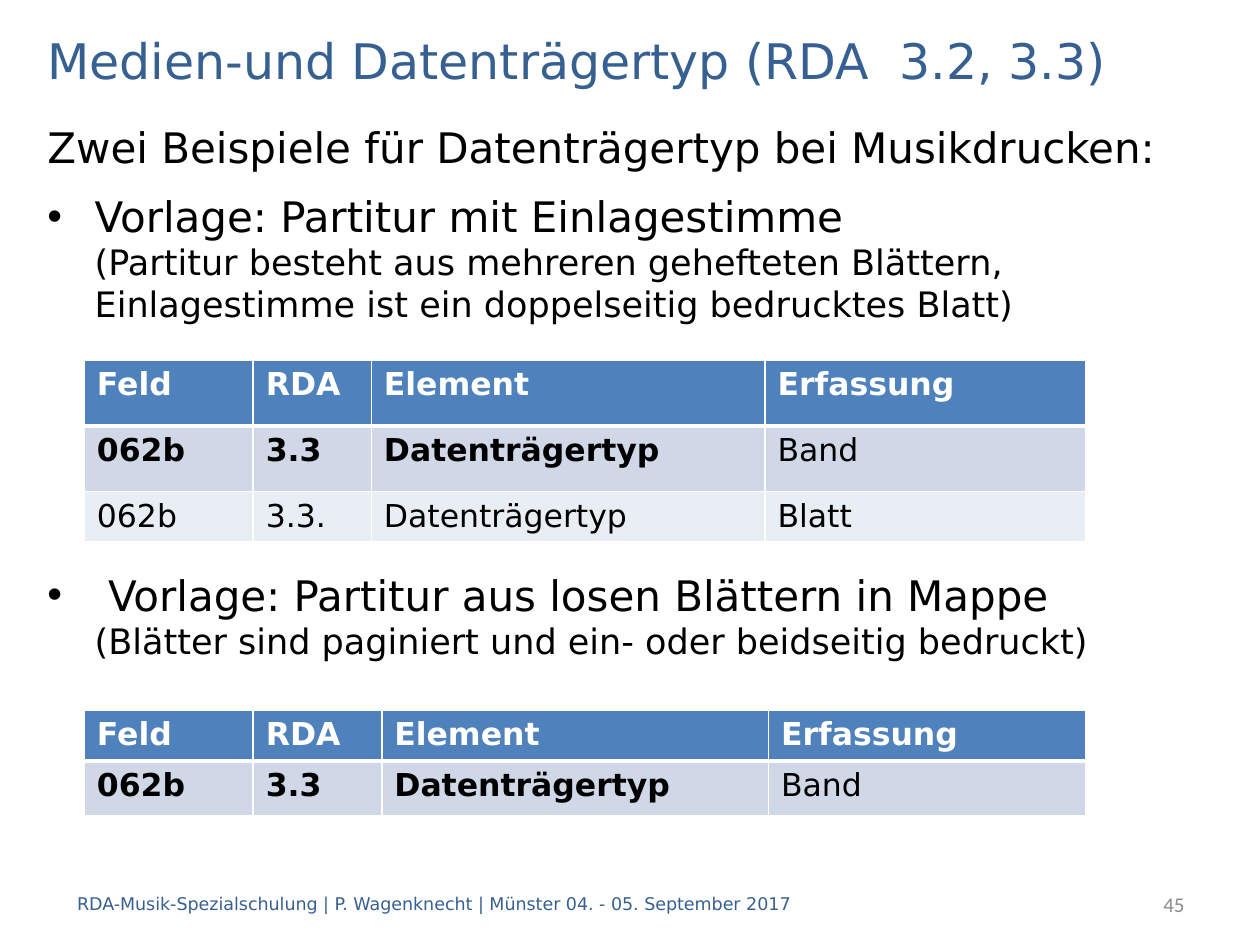
from lxml.etree import SubElement
from pptx import Presentation
from pptx.dml.color import RGBColor
from pptx.enum.text import MSO_ANCHOR as ANCHOR, PP_ALIGN as ALIGN
from pptx.oxml.ns import qn
from pptx.util import Pt

SANS = "DejaVu Sans"
rgb = RGBColor.from_string


def style(p, size, color, name=SANS, bold=False):
    for r in p.runs:
        r.font.size = Pt(size)
        r.font.name = name
        r.font.bold = bold
        r.font.color.rgb = rgb(color)


def add_border(cell, side, width):
    """Draw a white line on one side (L, R, T or B) of a cell."""
    ln = SubElement(cell._tc.get_or_add_tcPr(), qn(f"a:ln{side}"), w=str(Pt(width)))
    SubElement(SubElement(ln, qn("a:solidFill")), qn("a:srgbClr"), val="FFFFFF")


prs = Presentation()
prs.slide_width, prs.slide_height = Pt(720), Pt(540)
s = prs.slides.add_slide(prs.slide_layouts[5])

# Title
title = s.shapes.title
title.left, title.top, title.width, title.height = Pt(20), Pt(14.5), Pt(680), Pt(40)
tf = title.text_frame
tf.text = "Medien-und Datenträgertyp (RDA  3.2, 3.3)"
tf.vertical_anchor = ANCHOR.MIDDLE
tf.paragraphs[0].alignment = ALIGN.LEFT
style(tf.paragraphs[0], 28, "376092")

# Body: an introduction and two bullets, with room for the first table between them
tf = s.shapes.add_textbox(Pt(20), Pt(66), Pt(680), Pt(430)).text_frame
tf.word_wrap = True
p = tf.paragraphs[0]
p.text = "Zwei Beispiele für Datenträgertyp bei Musikdrucken:"
p.space_after = Pt(6)
style(p, 24, "000000")

bullets = [
    (4.5, "Vorlage: Partitur mit Einlagestimme",
     "(Partitur besteht aus mehreren gehefteten Blättern, "
     "Einlagestimme ist ein doppelseitig bedrucktes Blatt)"),
    (139.5, " Vorlage: Partitur aus losen Blättern in Mappe",
     "(Blätter sind paginiert und ein- oder beidseitig bedruckt)"),
]
for gap, heading, detail in bullets:
    p = tf.add_paragraph()
    p.text = f"{heading}\v{detail}"
    p.space_before = Pt(gap)
    style(p, 24, "000000")
    p.runs[1].font.size = Pt(20)
    pPr = p._p.get_or_add_pPr()
    pPr.set("marL", str(Pt(27)))
    pPr.set("indent", str(Pt(-27)))
    SubElement(pPr, qn("a:buFont"), typeface="Arial")
    SubElement(pPr, qn("a:buChar"), char="•")

# Tables: top, column widths, row heights, rows
header = ["Feld", "RDA", "Element", "Erfassung"]
volume = ["062b", "3.3", "Datenträgertyp", "Band"]
sheet = ["062b", "3.3.", "Datenträgertyp", "Blatt"]
row_fills = ["4F81BD", "D0D8E8", "E9EDF4"]
tables = [
    (206, [96.5, 67.5, 225, 183.5], [37.5, 37.5, 28], [header, volume, sheet]),
    (406, [96.5, 73.5, 221, 181.5], [28, 31.5], [header, volume]),
]
for top, widths, heights, rows in tables:
    table = s.shapes.add_table(len(rows), len(header), Pt(48.2), Pt(top),
                               Pt(sum(widths)), Pt(sum(heights))).table
    for column, width in zip(table.columns, widths):
        column.width = Pt(width)
    for i, (height, texts) in enumerate(zip(heights, rows)):
        table.rows[i].height = Pt(height)
        for j, text in enumerate(texts):
            cell = table.cell(i, j)
            cell.text = text
            bold = i == 0 or (i == 1 and j < 3)
            style(cell.text_frame.paragraphs[0], 18,
                  "FFFFFF" if i == 0 else "000000", bold=bold)
            for side in "LRTB":
                header_edge = (i, side) in [(0, "B"), (1, "T")]
                add_border(cell, side, 3 if header_edge else 1)
            cell.fill.solid()
            cell.fill.fore_color.rgb = rgb(row_fills[i])

# Footer and slide number
footers = [
    (37, 601, "RDA-Musik-Spezialschulung | P. Wagenknecht | Münster 04. - 05. September 2017",
     10, "376092", SANS, ALIGN.LEFT),
    (569.5, 114.5, "45", 12, "8C8C8C", "Calibri", ALIGN.RIGHT),
]
for left, width, text, size, color, font, align in footers:
    tf = s.shapes.add_textbox(Pt(left), Pt(502), Pt(width), Pt(29)).text_frame
    tf.word_wrap = True
    tf.vertical_anchor = ANCHOR.MIDDLE
    tf.text = text
    tf.paragraphs[0].alignment = align
    style(tf.paragraphs[0], size, color, font)

prs.save("out.pptx")
